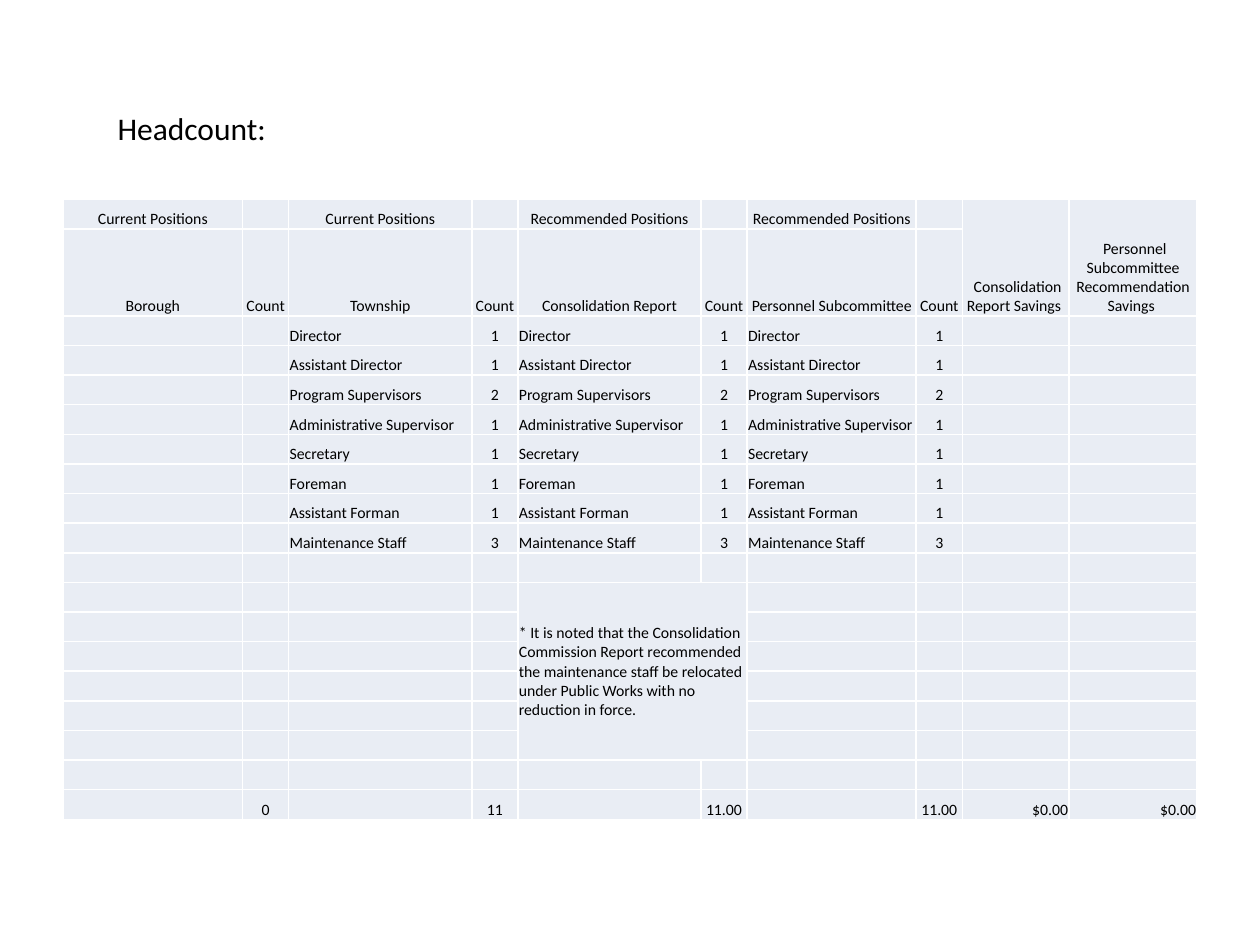
from lxml.etree import SubElement as Sub
from pptx import Presentation as Deck
from pptx.dml.color import RGBColor as Rgb
from pptx.enum.text import MSO_ANCHOR as Anchor, MSO_AUTO_SIZE as Auto, PP_ALIGN as Align
from pptx.oxml.ns import qn
from pptx.util import Cm, Pt

HUES = {"text": "000000", "cell": "E9EDF4", "rule": "FFFFFF"}
WIDE, SLIM, TOTAL = 3.69, 0.93, 12.5
COLS = [3.62, SLIM, WIDE, SLIM, WIDE, SLIM, 3.41, SLIM, 2.15, 2.58]
HEAD = 1.75
ROWS, LAST = 19, 18
NOTE = (
    "* It is noted that the Consolidation Commission Report recommended the "
    "maintenance staff be relocated under Public Works with no reduction in force."
)
STAFF = [
    ("Director", 1),
    ("Assistant Director", 1),
    ("Program Supervisors", 2),
    ("Administrative Supervisor", 1),
    ("Secretary", 1),
    ("Foreman", 1),
    ("Assistant Forman", 1),
    ("Maintenance Staff", 3),
]
TOPS = ["Current Positions"] * 2 + ["Recommended Positions"] * 2
GROUPS = ["Borough", "Township", "Consolidation Report", "Personnel Subcommittee"]
SUMS = ["0", "11", "11.00", "11.00"]
SAVED = [" Consolidation Report Savings ", " Personnel Subcommittee Recommendation Savings "]


def write(frame, text, font="Calibri", size=9, hue="text", align=Align.LEFT):
    frame.word_wrap = True
    para = frame.paragraphs[0]
    para.alignment = align
    if not text:
        Sub(para._p, qn("a:endParaRPr"), sz=str(size * 100))
        return
    run = para.add_run()
    run.text = text
    run.font.name = font
    run.font.size = Pt(size)
    run.font.color.rgb = Rgb.from_string(HUES[hue])


class Page:
    def __init__(self, slide, inset=0.02, rule=1):
        self.slide = slide
        self.inset = Cm(inset)
        self.rule = Pt(rule)

    def label(self, text, x, y, w, h, **form):
        frame = self.slide.shapes.add_textbox(Cm(x), Cm(y), Cm(w), Cm(h)).text_frame
        write(frame, text, **form)
        frame.auto_size = Auto.SHAPE_TO_FIT_TEXT

    def cell(self, cell, text="", align=Align.LEFT, anchor=Anchor.BOTTOM):
        cell.margin_left = cell.margin_top = cell.margin_right = self.inset
        cell.margin_bottom = 0
        cell.vertical_anchor = anchor
        props = cell._tc.get_or_add_tcPr()
        for side in "LRTB":
            line = Sub(props, qn(f"a:ln{side}"), w=str(self.rule))
            Sub(Sub(line, qn("a:solidFill")), qn("a:srgbClr"), val=HUES["rule"])
        cell.fill.solid()
        cell.fill.fore_color.rgb = Rgb.from_string(HUES["cell"])
        write(cell.text_frame, text, align=align)

    def table(self, items, merges, x, y, cols, rows):
        shape = self.slide.shapes.add_table(
            len(rows), len(cols), Cm(x), Cm(y), Cm(sum(cols)), Cm(sum(rows))
        )
        grid = shape.table
        grid.first_row = grid.horz_banding = False
        for col, width in zip(grid.columns, cols):
            col.width = Cm(width)
        for row, height in zip(grid.rows, rows):
            row.height = Cm(height)
        for start, end in merges:
            grid.cell(*start).merge(grid.cell(*end))
        for r in range(len(rows)):
            for c in range(len(cols)):
                cell = grid.cell(r, c)
                if not cell.is_spanned:
                    self.cell(cell, **items.get((r, c), {}))


def fill():
    items = {}

    def put(row, col, text, align=Align.CENTER, **form):
        items[row, col] = dict(text=text, align=align, **form)

    for i, (top, group, total) in enumerate(zip(TOPS, GROUPS, SUMS)):
        col = 2 * i
        put(0, col, top)
        put(1, col, group)
        put(1, col + 1, "Count")
        put(LAST, col + 1, total)
        if i:
            for row, (role, count) in enumerate(STAFF, 2):
                put(row, col, role, Align.LEFT)
                put(row, col + 1, str(count))
    for col, text in enumerate(SAVED, 8):
        put(0, col, text)
        put(LAST, col, "$0.00", Align.RIGHT)
    put(11, 4, NOTE, Align.LEFT, anchor=Anchor.MIDDLE)
    return items


def main():
    deck = Deck()
    deck.slide_width, deck.slide_height = Cm(25.4), Cm(19.05)
    page = Page(deck.slides.add_slide(deck.slide_layouts[6]))
    rows = [(TOTAL - HEAD) / (ROWS - 1)] * ROWS
    rows[1] = HEAD
    merges = [((0, 8), (1, 8)), ((0, 9), (1, 9)), ((11, 4), (16, 5))]
    page.table(fill(), merges, 1.27, 4.02, COLS, rows)
    page.label("Headcount:", 2.12, 2.08, 17.15, 1.02, size=18)
    deck.save("out.pptx")


if __name__ == "__main__":
    main()
